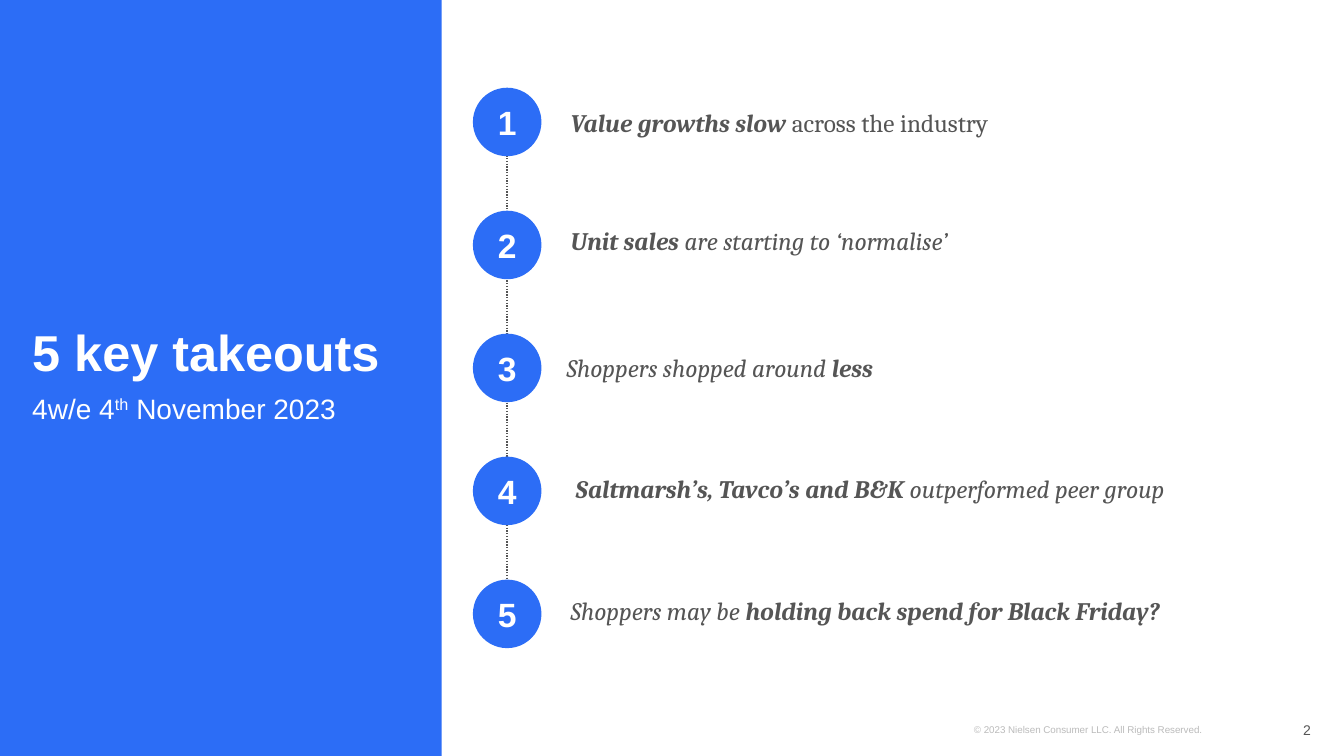
from pptx import Presentation
from pptx.dml.color import RGBColor
from pptx.enum.dml import MSO_LINE
from pptx.enum.shapes import MSO_CONNECTOR, MSO_SHAPE
from pptx.enum.text import MSO_ANCHOR, PP_ALIGN
from pptx.oxml.ns import qn
from pptx.util import Inches, Pt
from lxml.etree import SubElement

COLORS = {"blue": "2C6DF6", "white": "FFFFFF", "text": "555555", "footer": "BBBBBB"}

TITLE = {"name": "Arial", "size": Pt(36), "bold": True}
SUBTITLE = {"name": "Arial", "size": Pt(20)}
NUMBER = {"name": "Arial", "size": Pt(24), "bold": True}
TAKEOUT = {"name": "Cambria", "size": Pt(18), "italic": True}
STRONG = TAKEOUT | {"bold": True}
UPRIGHT = TAKEOUT | {"italic": False}
COPYRIGHT = {"name": "Arial", "size": Pt(7)}
PAGE_NUMBER = {"name": "Arial", "size": Pt(10)}

# Each takeout: horizontal and vertical shift from its place in the row, then its runs
TAKEOUTS = [
    (0, 0, [("Value growths slow ", STRONG), ("across the industry", UPRIGHT)]),
    (0, -0.05, [("Unit sales ", STRONG), ("are starting to ‘normalise’", TAKEOUT)]),
    (-0.04, -0.01, [("Shoppers shopped around ", TAKEOUT), ("less", STRONG)]),
    (0.05, -0.02, [("Saltmarsh’s, Tavco’s and B&K ", STRONG),
                   ("outperformed peer group", TAKEOUT)]),
    (0, -0.03, [("Shoppers may be ", TAKEOUT),
                ("holding back spend for Black Friday?", STRONG)]),
]


def rgb(color):
    return RGBColor.from_string(COLORS[color])


def write(frame, runs, color, anchor=MSO_ANCHOR.TOP, align=PP_ALIGN.LEFT, side=0):
    """Fill a text frame with one paragraph of (text, format) runs."""
    layout = {"word_wrap": True, "vertical_anchor": anchor,
              "margin_left": Inches(side), "margin_right": Inches(side),
              "margin_top": Inches(0.05), "margin_bottom": Inches(0.05)}
    for key, value in layout.items():
        setattr(frame, key, value)
    paragraph = frame.paragraphs[0]
    paragraph.alignment = align
    for text, style in runs:
        run = paragraph.add_run()
        run.text = text
        for key, value in style.items():
            setattr(run.font, key, value)
        run.font.color.rgb = rgb(color)
    return paragraph


def add_text(slide, box, runs, color, **options):
    frame = slide.shapes.add_textbox(*map(Inches, box)).text_frame
    return write(frame, runs, color, **options)


def add_blue_shape(slide, preset, box):
    shape = slide.shapes.add_shape(preset, *map(Inches, box))
    shape.shadow.inherit = False
    shape.fill.solid()
    shape.fill.fore_color.rgb = rgb("blue")
    shape.line.fill.background()
    return shape


def add_title_panel(slide, left, top, width, height):
    add_blue_shape(slide, MSO_SHAPE.RECTANGLE, (left, top, width, height))
    text_left, text_width, split = left + 0.32, width - 0.55, top + 3.83
    add_text(slide, (text_left, split - 2.61, text_width, 2.61),
             [("5 key takeouts", TITLE)], "white", anchor=MSO_ANCHOR.BOTTOM)
    date = add_text(slide, (text_left, split, text_width, 0.48),
                    [("4w/e 4", SUBTITLE), ("th", SUBTITLE), (" November 2023", SUBTITLE)],
                    "white")
    date.runs[1].font._element.set("baseline", "30000")


def add_takeouts(slide, left, top, width, height):
    """Numbered circles on a dotted line, each with its takeout beside it."""
    circle = 0.68
    step = (height - circle) / (len(TAKEOUTS) - 1)
    axis = left + circle / 2
    line = slide.shapes.add_connector(
        MSO_CONNECTOR.STRAIGHT, Inches(axis), Inches(top + circle / 2),
        Inches(axis), Inches(top + height - circle / 2))
    line.line.color.rgb = rgb("text")
    line.line.width = Pt(1)
    line.line.dash_style = MSO_LINE.ROUND_DOT
    SubElement(line._element.spPr, qn("a:effectLst"))

    text_left = left + 0.97
    for index, (shift_x, shift_y, runs) in enumerate(TAKEOUTS):
        y = top + index * step
        marker = add_blue_shape(slide, MSO_SHAPE.OVAL, (left, y, circle, circle))
        write(marker.text_frame, [(str(index + 1), NUMBER)], "white",
              anchor=MSO_ANCHOR.MIDDLE, align=PP_ALIGN.CENTER, side=0.05)
        add_text(slide, (text_left + shift_x, y + shift_y, left + width - text_left, circle),
                 runs, "text", anchor=MSO_ANCHOR.MIDDLE)


def add_footer(slide, left, top, width, height):
    add_text(slide, (left, top + 0.09, 2.84, 0.22),
             [("© 2023 Nielsen Consumer LLC. All Rights Reserved.", COPYRIGHT)], "footer")
    add_text(slide, (left + width - 0.99, top, 0.99, height), [("2", PAGE_NUMBER)], "text",
             anchor=MSO_ANCHOR.MIDDLE, align=PP_ALIGN.RIGHT)


def main():
    deck = Presentation()
    deck.slide_width, deck.slide_height = Inches(13.33), Inches(7.5)
    slide = deck.slides.add_slide(deck.slide_layouts[6])
    add_title_panel(slide, 0, 0, 4.38, 7.5)
    add_takeouts(slide, 4.69, 0.87, 8.3, 5.56)
    add_footer(slide, 9.66, 7.04, 3.34, 0.4)
    deck.save("out.pptx")


if __name__ == "__main__":
    main()
